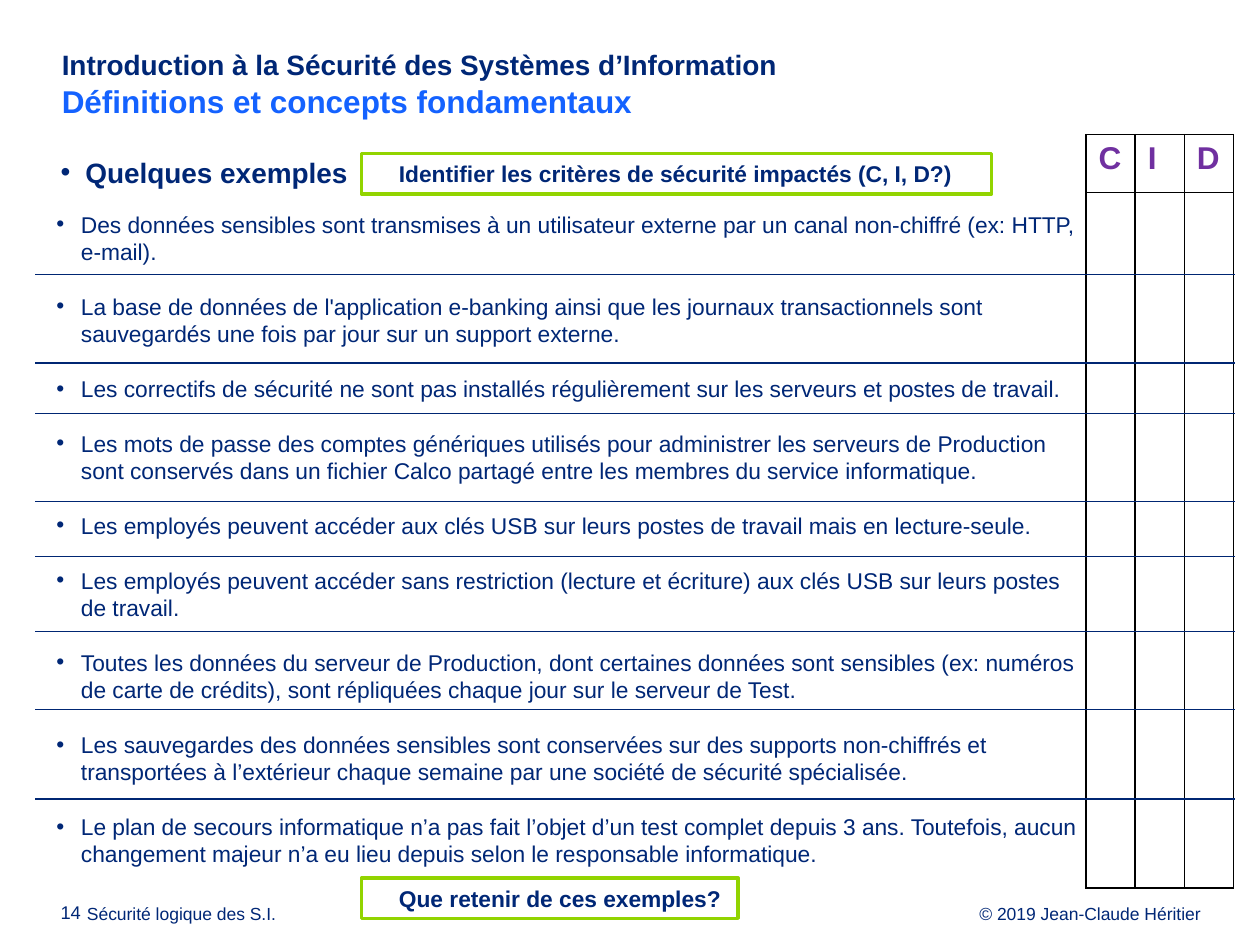
from lxml.etree import SubElement
from pptx import Presentation
from pptx.dml.color import RGBColor
from pptx.enum.shapes import MSO_CONNECTOR, MSO_SHAPE
from pptx.enum.text import MSO_ANCHOR, MSO_AUTO_SIZE, PP_ALIGN
from pptx.oxml import parse_xml
from pptx.oxml.ns import nsdecls, qn
from pptx.util import Pt

COLORS = {
    "navy": "002776", "blue": "1462FF", "purple": "7030A0",
    "green": "92D400", "rule": "002673", "black": "000000", "white": "FFFFFF",
}


def format_runs(paragraph, size, color="navy", bold=False):
    for run in paragraph.runs:
        run.font.name = "Arial"
        run.font.size = Pt(size)
        run.font.bold = bold
        run.font.color.rgb = RGBColor.from_string(COLORS[color])


def set_frame(text_frame, left=0, top=0, right=0, bottom=0, anchor=MSO_ANCHOR.TOP):
    """Set insets in points, wrapping, anchor and a fixed size."""
    text_frame.margin_left, text_frame.margin_top = Pt(left), Pt(top)
    text_frame.margin_right, text_frame.margin_bottom = Pt(right), Pt(bottom)
    text_frame.word_wrap = True
    text_frame.auto_size = MSO_AUTO_SIZE.NONE
    text_frame.vertical_anchor = anchor


presentation = Presentation()
presentation.slide_width, presentation.slide_height = Pt(720), Pt(540)
slide = presentation.slides.add_slide(presentation.slide_layouts[1])
shapes = slide.shapes

# Title and heading
title, body = shapes.title, slide.placeholders[1]
title.left, title.top, title.width, title.height = Pt(32.4), Pt(27.4), Pt(663), Pt(49.7)
title.text_frame.text = (
    "Introduction à la Sécurité des Systèmes d’Information\n"
    "Définitions et concepts fondamentaux"
)
set_frame(title.text_frame, left=2.9)
for paragraph, size, color in zip(title.text_frame.paragraphs, (16, 18), ("navy", "blue")):
    paragraph.alignment = PP_ALIGN.LEFT
    format_runs(paragraph, size, color, bold=True)

body.left, body.top, body.width, body.height = Pt(31.7), Pt(88.6), Pt(663), Pt(416)
body.text_frame.text = "Quelques exemples"
set_frame(body.text_frame, left=2.9)
heading = body.text_frame.paragraphs[0]
heading.space_before = Pt(0)
format_runs(heading, 16, bold=True)
properties = heading._p.get_or_add_pPr()
properties.set("marL", str(Pt(14.2)))
properties.set("indent", str(Pt(-14.2)))

# Footer
footers = [
    ("© 2019 Jean-Claude Héritier", 504, 182, 10, PP_ALIGN.RIGHT),
    ("Sécurité logique des S.I.", 49.7, 182, 10, PP_ALIGN.LEFT),
    ("14", 34.6, 15, 10.5, PP_ALIGN.LEFT),
]
for text, left, width, size, alignment in footers:
    footer = shapes.add_textbox(Pt(left), Pt(517), Pt(width), Pt(11.5))
    set_frame(footer.text_frame)
    footer.text_frame.text = text
    paragraph = footer.text_frame.paragraphs[0]
    paragraph.alignment = alignment
    paragraph.line_spacing = Pt(10.8)
    format_runs(paragraph, size)

# Examples
examples = [
    "Des données sensibles sont transmises à un utilisateur externe par un canal non-chiffré (ex: HTTP, e-mail).",
    "La base de données de l'application e-banking ainsi que les journaux transactionnels sont sauvegardés une fois par jour sur un support externe.",
    "Les correctifs de sécurité ne sont pas installés régulièrement sur les serveurs et postes de travail.",
    "Les mots de passe des comptes génériques utilisés pour administrer les serveurs de Production sont conservés dans un fichier Calco partagé entre les membres du service informatique.",
    "Les employés peuvent accéder aux clés USB sur leurs postes de travail mais en lecture-seule.",
    "Les employés peuvent accéder sans restriction (lecture et écriture) aux clés USB sur leurs postes de travail.",
    "Toutes les données du serveur de Production, dont certaines données sont sensibles (ex: numéros de carte de crédits), sont répliquées chaque jour sur le serveur de Test.",
    "Les sauvegardes des données sensibles sont conservées sur des supports non-chiffrés et transportées à l’extérieur chaque semaine par une société de sécurité spécialisée.",
    "Le plan de secours informatique n’a pas fait l’objet d’un test complet depuis 3 ans. Toutefois, aucun changement majeur n’a eu lieu depuis selon le responsable informatique.",
]
LINE_PITCH = 15.65
example_box = shapes.add_textbox(Pt(25.2), Pt(116.6), Pt(595.4), Pt(385.2))
set_frame(example_box.text_frame, left=7.2, top=3.6, right=5, bottom=3.6)
example_box.text_frame.text = "\n".join(examples)
for paragraph in example_box.text_frame.paragraphs:
    paragraph.line_spacing = Pt(LINE_PITCH)
    paragraph.space_after = Pt(LINE_PITCH)
    format_runs(paragraph, 13)
    properties = paragraph._p.get_or_add_pPr()
    properties.set("marL", str(Pt(14)))
    properties.set("indent", str(Pt(-14)))
    SubElement(properties, qn("a:buFont"), typeface="Arial")
    SubElement(properties, qn("a:buChar"), char="•")

# Criteria table
criteria = ["C", "I", "D"]
table = shapes.add_table(2, 3, Pt(620.6), Pt(77), Pt(84.3), Pt(430.5)).table
table.first_row = table.horz_banding = False
table.rows[0].height, table.rows[1].height = Pt(33.1), Pt(397.4)
for column, criterion in enumerate(criteria):
    table.columns[column].width = Pt(28.1)
    header = table.cell(0, column)
    header.text_frame.text = criterion
    format_runs(header.text_frame.paragraphs[0], 18, "purple", bold=True)
for cell in table.iter_cells():
    cell_properties = cell._tc.get_or_add_tcPr()
    for side in ("lnL", "lnR", "lnT", "lnB"):
        cell_properties.append(parse_xml(
            f'<a:{side} {nsdecls("a")} w="{Pt(1)}"><a:solidFill>'
            f'<a:srgbClr val="{COLORS["black"]}"/></a:solidFill></a:{side}>'
        ))
    cell.fill.solid()
    cell.fill.fore_color.rgb = RGBColor.from_string(COLORS["white"])

# Rules between examples
for y in (157, 207.4, 236.2, 286.6, 318.2, 360.7, 405.4, 456.5):
    rule = shapes.add_connector(MSO_CONNECTOR.STRAIGHT, Pt(20.2), Pt(y), Pt(705.6), Pt(y))
    rule.line.width = Pt(0.75)
    rule.line.color.rgb = RGBColor.from_string(COLORS["rule"])
    SubElement(rule._element.spPr, qn("a:effectLst"))

# Framed questions
questions = [
    ("Identifier les critères de sécurité impactés (C, I, D?)", 87.8, 360),
    ("Que retenir de ces exemples?", 501.8, 215.3),
]
for text, top, width in questions:
    question = shapes.add_shape(MSO_SHAPE.RECTANGLE, Pt(206.6), Pt(top), Pt(width), Pt(23))
    question.shadow.inherit = False
    question.fill.solid()
    question.fill.fore_color.rgb = RGBColor.from_string(COLORS["white"])
    question.line.width = Pt(2)
    question.line.color.rgb = RGBColor.from_string(COLORS["green"])
    set_frame(question.text_frame, left=21.4, anchor=MSO_ANCHOR.MIDDLE)
    question.text_frame.text = text
    paragraph = question.text_frame.paragraphs[0]
    paragraph.alignment = PP_ALIGN.LEFT
    format_runs(paragraph, 13, bold=True)

presentation.save("out.pptx")
